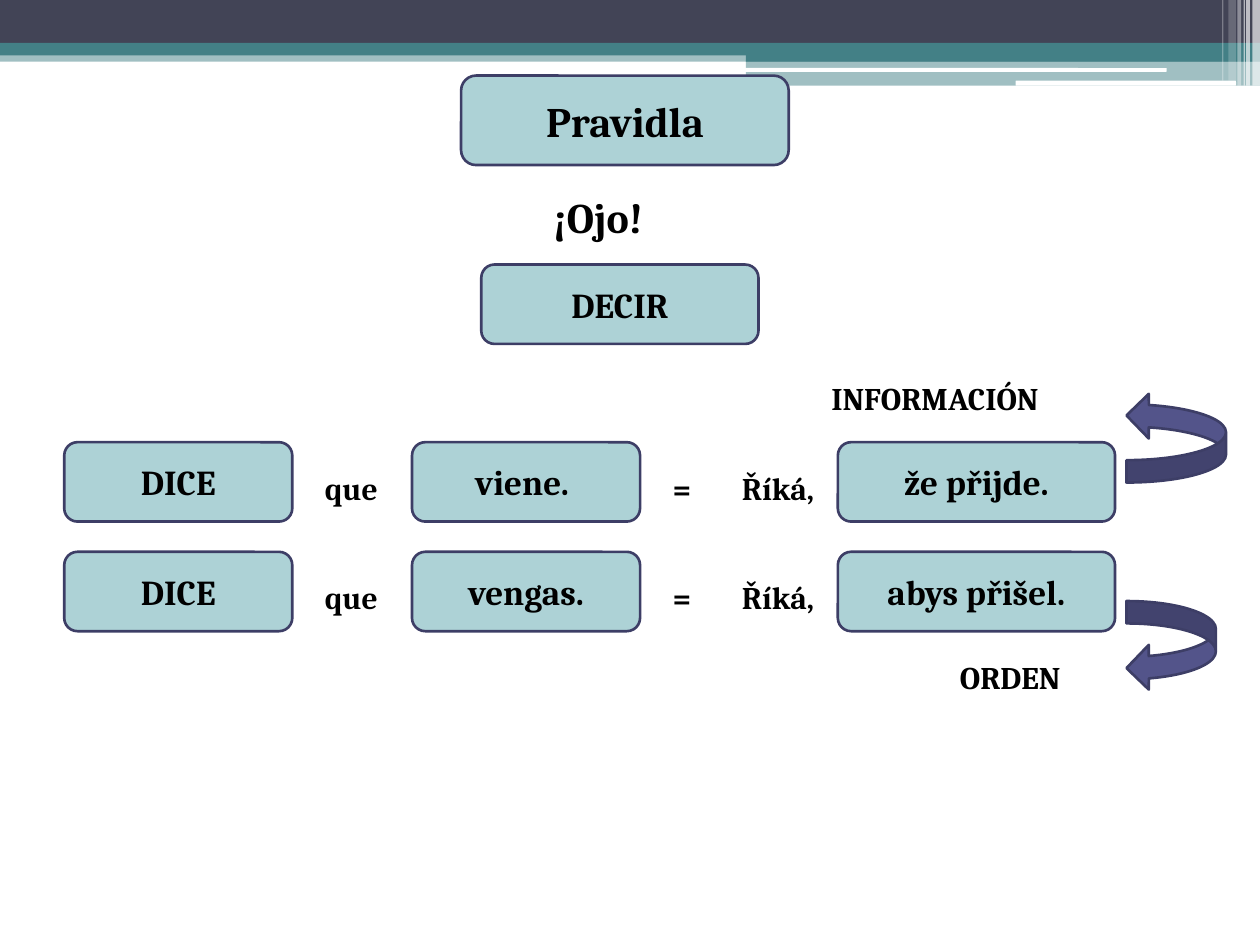
from pptx import Presentation
from pptx import util as u
from pptx.dml import color
from pptx.enum import shapes, text
from pptx.oxml import ns
from lxml import etree

# Grid: 100 columns by 75 rows, one cell is a tenth of an inch
COLS, ROWS = 100, 75
CELL = u.Inches(0.1)
FONT = "Cambria"
TEAL, SLATE, WHITE, BLACK = "438086", "424456", "FFFFFF", "000000"
PALE, VIOLET, EDGE = "ADD2D6", "53548A", "3D3E66"
KIND = shapes.MSO_SHAPE


def rgb(code):
    return color.RGBColor.from_string(code)


def place(box):
    return [round(n * CELL) for n in box]


def shape(page, kind, box, fill, alpha=100, edge=None):
    item = page.shapes.add_shape(kind, *place(box))
    item.shadow.inherit = False
    item.fill.solid()
    item.fill.fore_color.rgb = rgb(fill)
    if alpha < 100:
        tint = item.fill._xPr.find(".//" + ns.qn("a:srgbClr"))
        etree.SubElement(tint, ns.qn("a:alpha")).set("val", str(alpha * 1000))
    if edge:
        item.line.color.rgb = rgb(edge)
        item.line.width = u.Pt(1.5)
    else:
        item.line.fill.background()
    return item


def write(item, words, size, align):
    line = item.text_frame.paragraphs[0]
    line.text = words
    line.alignment = align
    line.font.name, line.font.size, line.font.bold = FONT, u.Pt(size), True
    line.font.color.rgb = rgb(BLACK)


def card(page, box, words, size=20):
    item = shape(page, KIND.ROUNDED_RECTANGLE, box, PALE, edge=EDGE)
    item.text_frame.vertical_anchor = text.MSO_ANCHOR.MIDDLE
    write(item, words, size, text.PP_ALIGN.CENTER)


def label(page, box, words, size=18, wrap=False):
    item = page.shapes.add_textbox(*place(box))
    item.text_frame.word_wrap = wrap
    item.text_frame.auto_size = text.MSO_AUTO_SIZE.SHAPE_TO_FIT_TEXT
    write(item, words, size, text.PP_ALIGN.LEFT)


def arrow(page, box, flip=False):
    item = shape(page, KIND.CURVED_LEFT_ARROW, box, VIOLET, edge=EDGE)
    if flip:
        item._element.spPr.find(ns.qn("a:xfrm")).set("flipV", "1")


def banner(page, box):
    left, top, wide, high = box
    half = 0.592 * wide
    # Bands: x, y, width, height, colour, opacity
    bands = [
        (0, 4, wide, 0.9, TEAL, 50),
        (0, 0, wide, 3.4, SLATE, 100),
        (0, 3.4, wide, 1, TEAL, 100),
        (half, 3.9, wide - half, 1, TEAL, 100),
        (half, 4.8, wide - half, 2, TEAL, 50),
    ]
    for x, y, w, h, fill, alpha in bands:
        shape(page, KIND.RECTANGLE, (left + x, top + y, w, h), fill, alpha)
    # White rules
    for x, y, w, h in [(59.1, 5.4, 33.5, 0.3), (80.6, 6.4, 17.5, 0.4)]:
        shape(page, KIND.ROUNDED_RECTANGLE, (left + x, top + y, w, h), WHITE)
    # Stripes at the right end: x, width, height, opacity
    stripes = [
        (99.4, 0.6, high, 65), (98.9, 0.3, high, 65), (98.7, 0.1, high, 60),
        (98.2, 0.3, high, 40), (97.5, 0.6, 6.4, 20), (97, 0.1, 6.4, 30),
    ]
    for x, w, h, alpha in stripes:
        shape(page, KIND.RECTANGLE, (left + x, top, w, h), WHITE, alpha)


def heading(page, box):
    left, top, wide, high = box
    card(page, (left, top, wide, 7.1), "Pravidla", 24)
    label(page, (left + 6.3, top + 8.7, 10.6, 5), "¡Ojo!", 24)
    card(page, (left + 1.6, top + high - 6.3, 22, 6.3), "DECIR")


def phrase(page, box, verb, sense):
    left, top, wide, high = box
    for x, w, words in [(0, 18.1, "DICE"), (27.6, 18.1, verb),
                        (wide - 22, 22, sense)]:
        card(page, (left + x, top, w, high), words)
    for x, w, words in [(19.7, 7.4, "que"), (47.3, 3.8, "="),
                        (52.8, 9.2, "Říká,")]:
        label(page, (left + x, top + 1.6, w, 4), words)


def main():
    deck = Presentation()
    deck.slide_width, deck.slide_height = COLS * CELL, ROWS * CELL
    page = deck.slides.add_slide(deck.slide_layouts[6])
    banner(page, (0, 0, COLS, 6.8))
    heading(page, (36.6, 6, 26, 21.3))
    # Example sentences
    pairs = [("viene. ", "že přijde."), ("vengas.", "abys přišel.")]
    for row, (verb, sense) in enumerate(pairs):
        phrase(page, (5.1, 35.1 + 8.7 * row, 83.4, 6.3), verb, sense)
    # Meaning of each sentence
    arrow(page, (89.4, 31.2, 7.9, 7.1), flip=True)
    arrow(page, (89.4, 47.7, 7.1, 7.1))
    label(page, (65, 29.6, 23.1, 4), "INFORMACIÓN", wrap=True)
    label(page, (75.2, 51.7, 12.2, 4), "ORDEN")
    deck.save("out.pptx")


if __name__ == "__main__":
    main()
